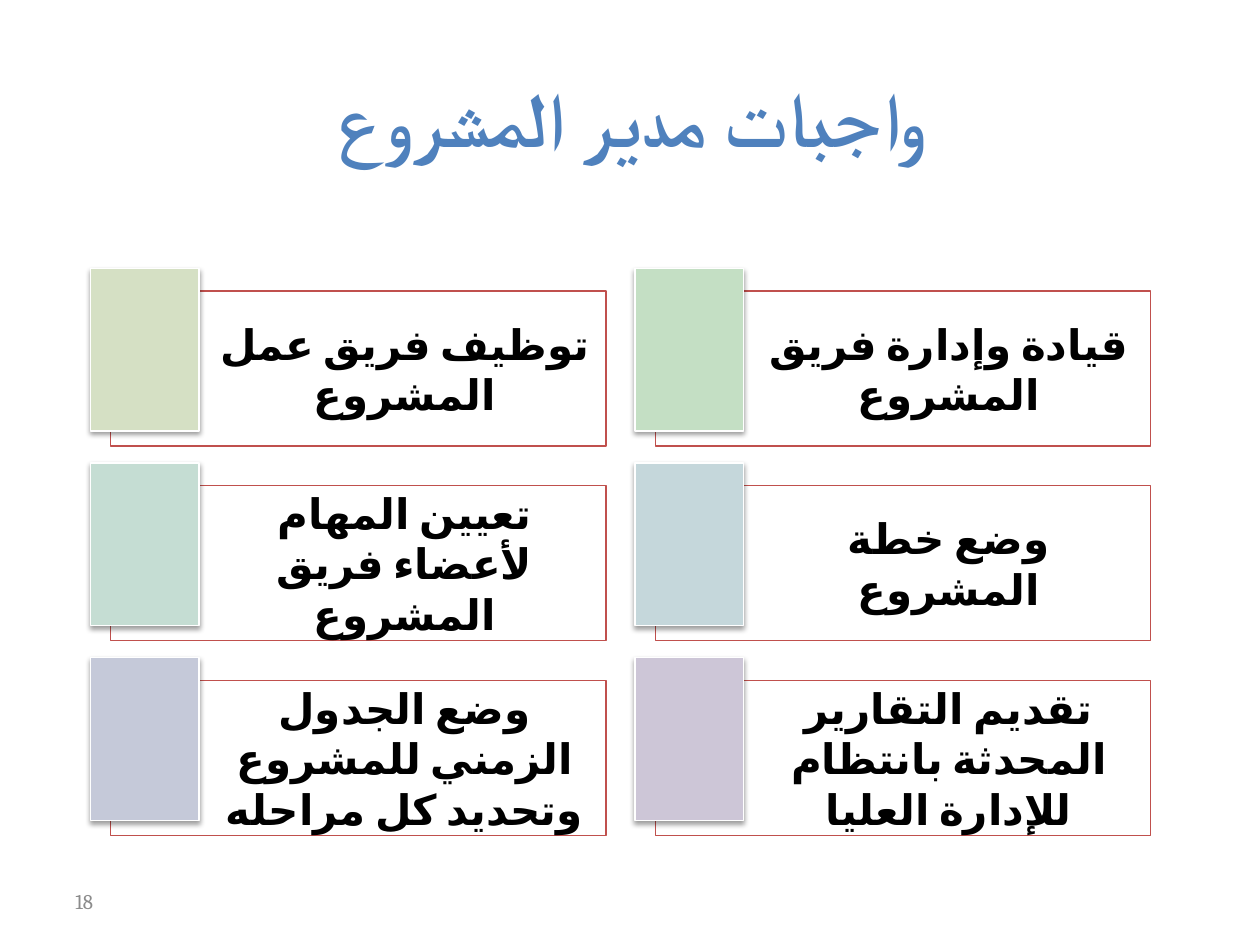
import pptx
import pptx.util
import pptx.dml.color
import pptx.enum.lang
import pptx.enum.shapes
import pptx.enum.text
import pptx.oxml
import pptx.oxml.ns
import lxml.etree

Inches = pptx.util.Inches
Pt = pptx.util.Pt
PP_ALIGN = pptx.enum.text.PP_ALIGN
qn = pptx.oxml.ns.qn

COLORS = {
    "title": "4F81BD",
    "number": "8C8C8C",
    "text": "000000",
    "white": "FFFFFF",
    "border": "C0504D",
}

# Duties row by row, left to right, each with its accent colour
DUTIES = [
    ("توظيف فريق عمل المشروع", "D5E0C4"),
    ("قيادة وإدارة فريق المشروع", "C4DFC4"),
    ("تعيين المهام لأعضاء فريق المشروع", "C5DDD3"),
    ("وضع خطة المشروع", "C5D7DB"),
    ("وضع الجدول الزمني للمشروع وتحديد كل مراحله", "C5C9D9"),
    ("تقديم التقارير المحدثة بانتظام للإدارة العليا", "CDC6D7"),
]

# Grid of cards, in inches
COLS = 2
LEFT, TOP = 0.88, 2.31
COL_STEP, ROW_STEP = 4.32, 3.09 / 2
CARD_W, CARD_H = 3.93, 1.23
ACCENT_W, ACCENT_H = 0.86, 1.29
ACCENT_DX, ACCENT_DY = -0.16, -0.18


def rgb(value):
    return pptx.dml.color.RGBColor.from_string(value)


def set_text(sp, text, font, size, color, align, bold=False):
    tf = sp.text_frame
    tf.text = text
    tf.word_wrap = True
    tf.vertical_anchor = pptx.enum.text.MSO_ANCHOR.MIDDLE
    p = tf.paragraphs[0]
    p.alignment = align
    r = p.runs[0]
    r.font.name = font
    r.font.size = Pt(size)
    r.font.bold = bold
    r.font.color.rgb = rgb(color)
    r.font.language_id = pptx.enum.lang.MSO_LANGUAGE_ID.ARABIC
    # Arabic letters use the complex-script font
    cs = lxml.etree.SubElement(r.font._element, qn("a:cs"))
    cs.set("typeface", font)
    return p


def add_title(s, text):
    sp = s.shapes.title
    sp.left, sp.top = Inches(0.5), Inches(0.3)
    sp.width, sp.height = Inches(9), Inches(1.25)
    p = set_text(sp, text, "Cambria", 44, COLORS["title"], PP_ALIGN.CENTER, True)
    p._p.get_or_add_pPr().set("rtl", "1")


def add_number(s, text):
    sp = s.shapes.add_textbox(Inches(0.5), Inches(6.95), Inches(2.33), Inches(0.4))
    set_text(sp, text, "Cambria", 12, COLORS["number"], PP_ALIGN.LEFT)


def add_rect(s, x, y, w, h, fill, line):
    sp = s.shapes.add_shape(pptx.enum.shapes.MSO_SHAPE.RECTANGLE,
                            Inches(x), Inches(y), Inches(w), Inches(h))
    sp.shadow.inherit = False
    sp.fill.solid()
    sp.fill.fore_color.rgb = rgb(fill)
    sp.line.color.rgb = rgb(line)
    sp.line.width = Pt(0.75)
    return sp


def set_alpha(color_parent, percent):
    clr = color_parent.find(".//" + qn("a:srgbClr"))
    lxml.etree.SubElement(clr, qn("a:alpha")).set("val", str(percent * 1000))


def add_shadow(sp):
    effects = sp._element.spPr.find(qn("a:effectLst"))
    shadow = lxml.etree.SubElement(effects, qn("a:outerShdw"))
    shadow.set("blurRad", str(Pt(3.1)))
    shadow.set("dist", str(Pt(1.6)))
    shadow.set("dir", str(90 * 60000))
    shadow.set("rotWithShape", "0")
    lxml.etree.SubElement(shadow, qn("a:srgbClr")).set("val", COLORS["text"])
    set_alpha(shadow, 38)


def add_card(s, x, y, text, accent):
    # Outlined frame with the duty
    frame = add_rect(s, x, y, CARD_W, CARD_H, COLORS["white"], COLORS["border"])
    set_alpha(frame._element.spPr.find(qn("a:solidFill")), 40)
    set_text(frame, text, "Calibri", 24, COLORS["text"], PP_ALIGN.CENTER, True)
    tf = frame.text_frame
    tf.margin_left = Inches(0.83)
    tf.margin_top = tf.margin_right = tf.margin_bottom = Inches(0.1)
    # Raised accent block over the left edge
    block = add_rect(s, x + ACCENT_DX, y + ACCENT_DY, ACCENT_W, ACCENT_H,
                     accent, COLORS["white"])
    add_shadow(block)


def main():
    prs = pptx.Presentation()
    prs.slide_width, prs.slide_height = Inches(10), Inches(7.5)
    s = prs.slides.add_slide(prs.slide_layouts[5])

    add_title(s, "واجبات مدير المشروع")
    add_number(s, "18")
    for i, (text, accent) in enumerate(DUTIES):
        row, col = divmod(i, COLS)
        add_card(s, LEFT + col * COL_STEP, TOP + row * ROW_STEP, text, accent)

    prs.save("out.pptx")


if __name__ == "__main__":
    main()
